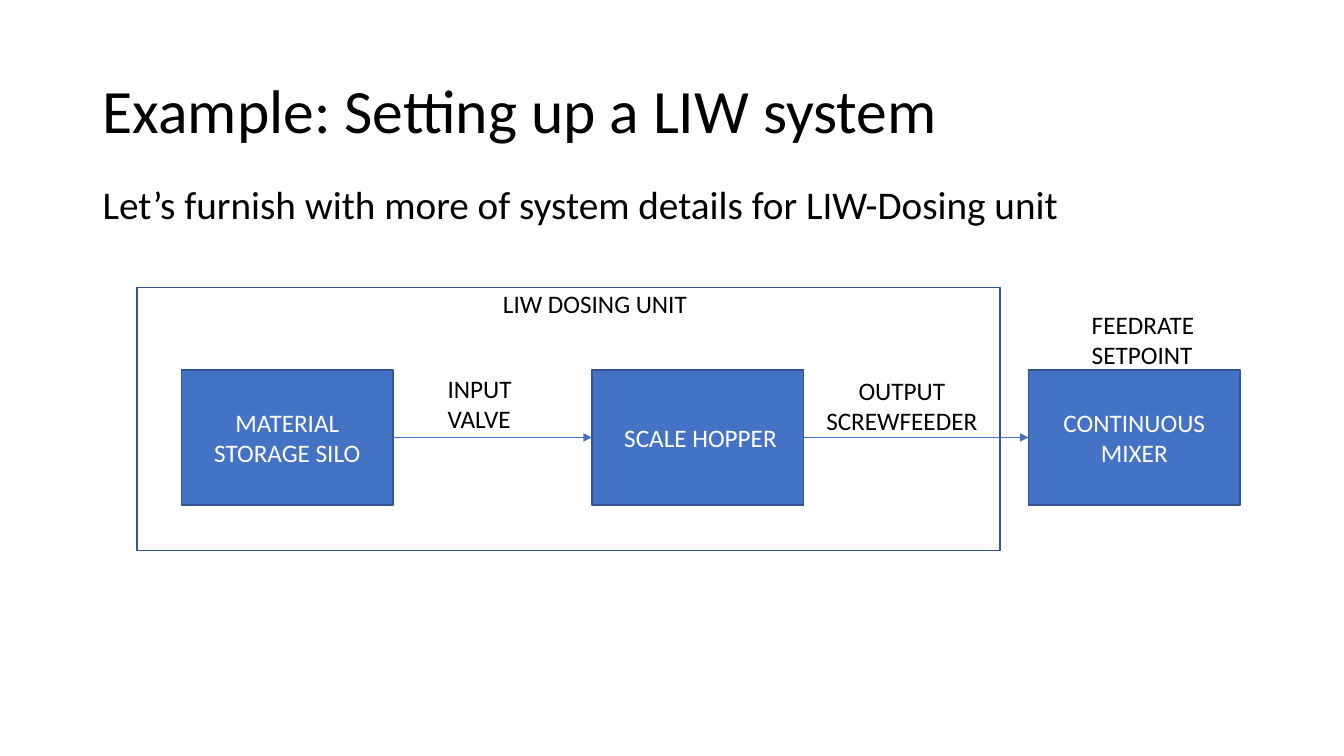
from pptx import Presentation
from pptx.dml.color import RGBColor
from pptx.enum.shapes import MSO_CONNECTOR, MSO_SHAPE
from pptx.enum.text import MSO_ANCHOR, PP_ALIGN
from pptx.oxml.ns import qn
from pptx.util import Inches, Pt
from lxml.etree import SubElement

BLUE = "4472C4"
OUTLINE = "325491"
BLACK = "000000"
WHITE = "FFFFFF"

BOX_TOP, BOX_WIDTH, BOX_HEIGHT = 3.67, 2.1, 1.34
RIGHT_SIDE, LEFT_SIDE = 3, 1


def rgb(color):
    return RGBColor.from_string(color)


def write(sp, text, size, color, align, anchor):
    tf = sp.text_frame
    tf.word_wrap = True
    tf.vertical_anchor = anchor
    p = tf.paragraphs[0]
    p.alignment = align
    r = p.add_run()
    r.text = text
    r.font.name = "Calibri"
    r.font.size = Pt(size)
    r.font.color.rgb = rgb(color)
    return p


def add_text(s, text, left, top, width, height, size=18,
             align=PP_ALIGN.LEFT, anchor=MSO_ANCHOR.TOP):
    sp = s.shapes.add_textbox(Inches(left), Inches(top), Inches(width), Inches(height))
    return write(sp, text, size, BLACK, align, anchor)


def add_rect(s, left, top, width, height, fill=None):
    sp = s.shapes.add_shape(MSO_SHAPE.RECTANGLE, Inches(left), Inches(top),
                            Inches(width), Inches(height))
    sp.shadow.inherit = False
    if fill:
        sp.fill.solid()
        sp.fill.fore_color.rgb = rgb(fill)
    else:
        sp.fill.background()
    sp.line.color.rgb = rgb(OUTLINE)
    sp.line.width = Pt(1)
    return sp


def add_stage(s, text, left):
    sp = add_rect(s, left, BOX_TOP, BOX_WIDTH, BOX_HEIGHT, BLUE)
    write(sp, text, 18, WHITE, PP_ALIGN.CENTER, MSO_ANCHOR.MIDDLE)
    return sp


def add_arrow(s, source, target):
    """Join the right side of source to the left side of target."""
    cxn = s.shapes.add_connector(MSO_CONNECTOR.STRAIGHT, 0, 0, 0, 0)
    cxn.begin_connect(source, RIGHT_SIDE)
    cxn.end_connect(target, LEFT_SIDE)
    cxn.line.color.rgb = rgb(BLUE)
    cxn.line.width = Pt(0.5)
    SubElement(cxn.line._get_or_add_ln(), qn("a:tailEnd"), type="triangle")
    SubElement(cxn._element.spPr, qn("a:effectLst"))


def main():
    prs = Presentation()
    prs.slide_width = Inches(13.33)
    prs.slide_height = Inches(7.5)
    s = prs.slides.add_slide(prs.slide_layouts[6])

    title = add_text(s, "Example: Setting up a LIW system", 0.92, 0.4, 11.5, 1.45,
                     size=44, anchor=MSO_ANCHOR.MIDDLE)
    title.line_spacing = 0.9
    add_text(s, "Let’s furnish with more of system details for LIW-Dosing unit",
             0.92, 1.74, 11.1, 0.57, size=28)

    add_rect(s, 1.36, 2.85, 8.56, 2.61)
    add_text(s, "LIW DOSING UNIT", 4.89, 2.81, 2.37, 0.4)

    silo = add_stage(s, "MATERIAL STORAGE SILO", 1.8)
    hopper = add_stage(s, " SCALE HOPPER", 5.87)
    mixer = add_stage(s, "CONTINUOUS MIXER", 10.2)
    add_arrow(s, silo, hopper)
    add_arrow(s, hopper, mixer)

    add_text(s, "INPUT VALVE", 4.34, 3.65, 1.15, 0.71)
    add_text(s, "OUTPUT SCREWFEEDER", 8.03, 3.67, 1.83, 0.71, align=PP_ALIGN.CENTER)
    add_text(s, "FEEDRATE SETPOINT", 10.73, 3.02, 1.43, 0.71)

    prs.save("out.pptx")


if __name__ == "__main__":
    main()
